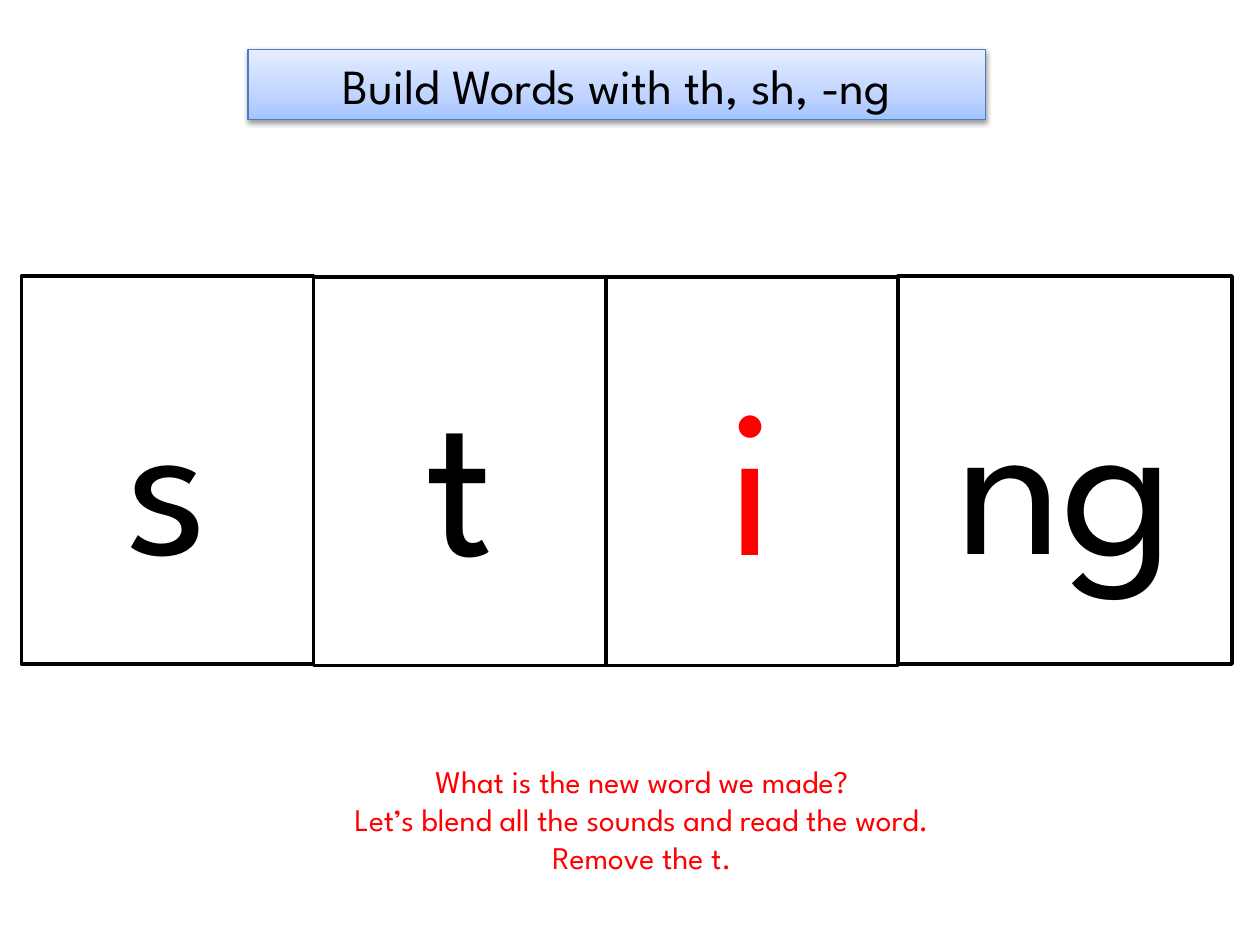
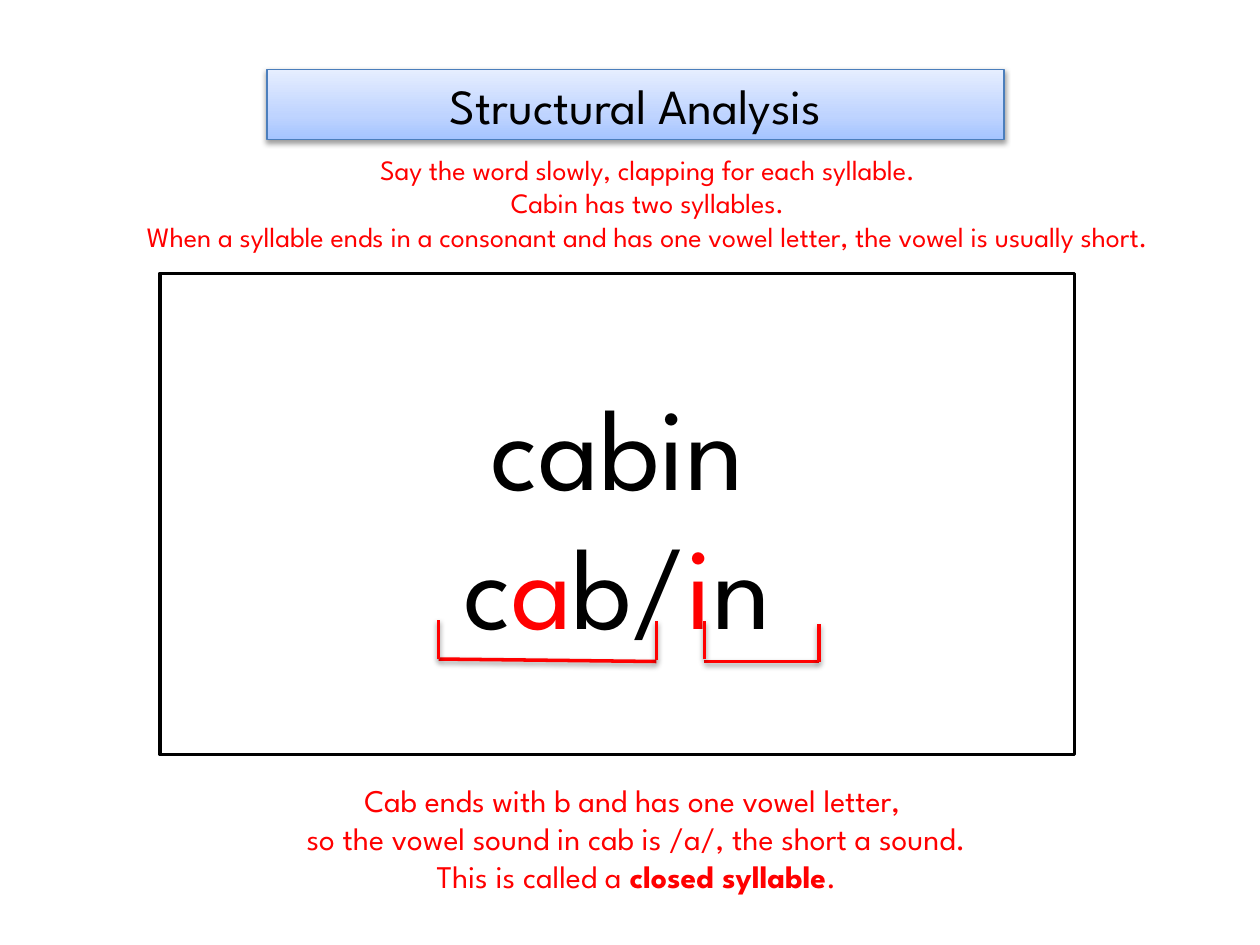
from lxml import etree
from pptx import Presentation
from pptx import util as u
from pptx.dml.color import RGBColor
from pptx.enum import shapes, text
from pptx.oxml import ns

FONT = "League Spartan"
BLACK = RGBColor(0x00, 0x00, 0x00)
WHITE = RGBColor(0xFF, 0xFF, 0xFF)
RED = RGBColor(0xFF, 0x00, 0x00)
BANNER_EDGE = RGBColor(0x4B, 0x7E, 0xBC)
BANNER_STOPS = (
    (0, RGBColor(0xA4, 0xC4, 0xFF)),
    (35, RGBColor(0xBF, 0xD4, 0xFF)),
    (100, RGBColor(0xE6, 0xEE, 0xFF)),
)
SHADOW_XML = (
    f'<a:effectLst {ns.nsdecls("a")}>'
    f'<a:outerShdw blurRad="{u.Pt(3.1)}" dist="{u.Pt(1.6)}" dir="5400000" rotWithShape="0">'
    f'<a:srgbClr val="{BLACK}"><a:alpha val="38000"/></a:srgbClr>'
    '</a:outerShdw></a:effectLst>'
)


def write_lines(shape, lines, size, color, anchor=text.MSO_ANCHOR.MIDDLE):
    frame = shape.text_frame
    frame_format = {
        "word_wrap": True,
        "auto_size": text.MSO_AUTO_SIZE.NONE,
        "vertical_anchor": anchor,
    }
    for name, value in frame_format.items():
        setattr(frame, name, value)
    for index, runs in enumerate(lines):
        paragraph = frame.paragraphs[0] if index == 0 else frame.add_paragraph()
        paragraph.alignment = text.PP_ALIGN.CENTER
        for words, run_color, bold in runs:
            run = paragraph.add_run()
            run.text = words
            font_format = {"name": FONT, "size": u.Pt(size), "bold": bold}
            for name, value in font_format.items():
                setattr(run.font, name, value)
            run.font.color.rgb = run_color or color


def add_card(slide, left, top, width, height, lines, size):
    card = slide.shapes.add_shape(
        shapes.MSO_SHAPE.RECTANGLE, u.Pt(left), u.Pt(top), u.Pt(width), u.Pt(height)
    )
    card.shadow.inherit = False
    card.fill.solid()
    card.fill.fore_color.rgb = WHITE
    card.line.color.rgb = BLACK
    card.line.width = u.Pt(2)
    write_lines(card, lines, size, BLACK)


presentation = Presentation()
presentation.slide_width = u.Pt(720)
presentation.slide_height = u.Pt(540)

titles = (
    ("Build Words with th, sh, -ng", 141.8, 28.1),
    ("Structural Analysis", 152.6, 39.6),
)
for title, left, top in titles:
    slide = presentation.slides.add_slide(presentation.slide_layouts[5])
    banner = slide.shapes.title
    place = {"left": left, "top": top, "width": 421.2, "height": 40.3}
    for name, value in place.items():
        setattr(banner, name, u.Pt(value))
    write_lines(banner, [[(title, None, False)]], 28, BLACK)
    banner.line.color.rgb = BANNER_EDGE
    banner.line.width = u.Pt(0.75)
    banner.fill.gradient()
    banner.fill.gradient_angle = 90
    stop_list = banner.element.spPr.find(".//" + ns.qn("a:gsLst"))
    stop_list.clear()
    for position, color in BANNER_STOPS:
        stop = etree.SubElement(stop_list, ns.qn("a:gs"), pos=str(position * 1000))
        etree.SubElement(stop, ns.qn("a:srgbClr"), val=str(color))
    banner.element.spPr.append(etree.fromstring(SHADOW_XML))

build_slide, syllable_slide = presentation.slides

tile_left = 12.2
tiles = (
    ("s", BLACK, 157.7, 167),
    ("t", BLACK, 158.4, 167),
    ("i", RED, 158.4, 167),
    ("ng", BLACK, 157.7, 190.8),
)
for letters, color, top, width in tiles:
    add_card(build_slide, tile_left, top, width, 221.8, [[(letters, color, False)]], 120)
    tile_left += width

split_word = [
    ("c", None, False),
    ("a", RED, False),
    ("b/", None, False),
    ("i", RED, False),
    ("n", None, False),
]
add_card(syllable_slide, 91.4, 156.2, 522.7, 275, [[("cabin", None, False)], split_word], 66)

prompts = (
    (build_slide, 115.9, 432, 501.8, 72.7, 18, [
        [("What is the new word we made?", None, False)],
        [("Let’s blend all the sounds and read the word.", None, False)],
        [("Remove the t.", None, False)],
    ]),
    (syllable_slide, 20.2, 83.5, 699.8, 65.5, 16, [
        [("Say the word slowly, clapping for each syllable.", None, False)],
        [("Cabin has two syllables.", None, False)],
        [("When a syllable ends in a consonant and has one vowel letter, "
          "the vowel is usually short.", None, False)],
    ]),
    (syllable_slide, 36.7, 442.8, 653.8, 72.7, 18, [
        [("Cab ends with b and has one vowel letter, ", None, False)],
        [("so the vowel sound in cab is /a/, the short a sound.", None, False)],
        [("This is called a ", None, False), ("closed syllable", None, True), (".", None, False)],
    ]),
)
for slide, left, top, width, height, size, lines in prompts:
    prompt = slide.shapes.add_textbox(u.Pt(left), u.Pt(top), u.Pt(width), u.Pt(height))
    write_lines(prompt, lines, size, RED, text.MSO_ANCHOR.TOP)

bracket_lines = (
    (250.6, 376.6, 375.1, 378),
    (250.6, 376.6, 250.6, 354.2),
    (375.1, 377.3, 375.1, 355),
    (402.5, 378, 468, 378),
    (402.5, 376.6, 402.5, 355),
    (468, 378, 468, 356.4),
)
for points in bracket_lines:
    bracket = syllable_slide.shapes.add_connector(
        shapes.MSO_CONNECTOR.STRAIGHT, *[u.Pt(value) for value in points]
    )
    bracket.line.color.rgb = RED
    bracket.line.width = u.Pt(2)
    bracket.element.spPr.append(etree.fromstring(SHADOW_XML))

presentation.save("out.pptx")
